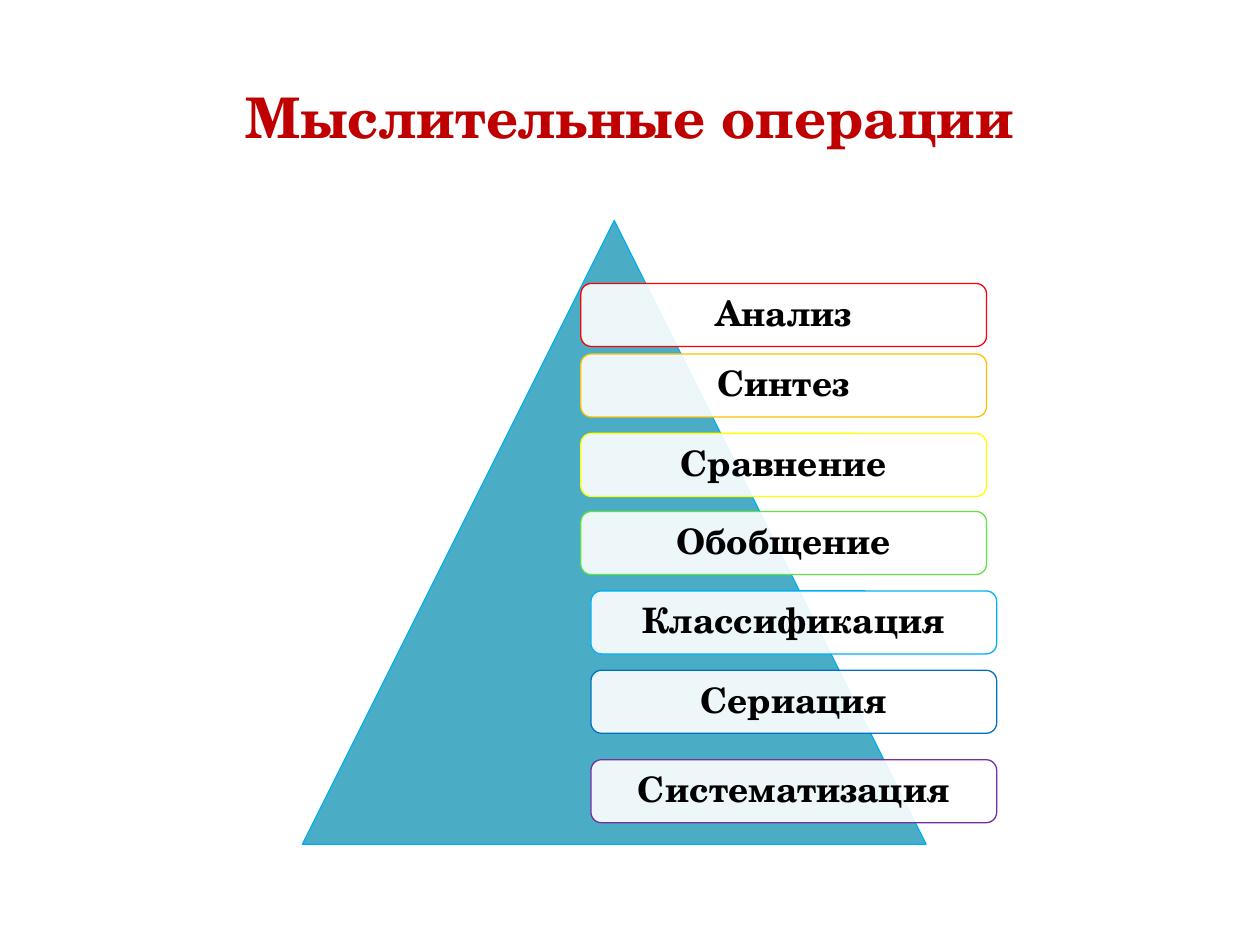
from dataclasses import dataclass

from lxml.etree import SubElement
from pptx import Presentation
from pptx.dml.color import RGBColor
from pptx.enum.shapes import MSO_SHAPE as Preset
from pptx.enum.text import MSO_ANCHOR as Anchor, PP_ALIGN as Align
from pptx.oxml.ns import qn
from pptx.shapes.autoshape import Shape
from pptx.slide import Slide
from pptx.text.text import TextFrame
from pptx.util import Inches, Pt

FONT = "TeX Gyre Schola"
UPPER_LEFT, LOWER_LEFT = 4.61, 4.69
CARD_WIDTH, CARD_HEIGHT = 3.22, 0.5


@dataclass(frozen=True)
class Operation:
    name: str
    left: float
    top: float
    outline: str


OPERATIONS = [
    Operation("Анализ", UPPER_LEFT, 2.25, "FF0000"),
    Operation("Синтез", UPPER_LEFT, 2.81, "FFC000"),
    Operation("Сравнение", UPPER_LEFT, 3.44, "FFFF00"),
    Operation("Обобщение", UPPER_LEFT, 4.06, "60E146"),
    Operation("Классификация", LOWER_LEFT, 4.69, "00B0F0"),
    Operation("Сериация", LOWER_LEFT, 5.32, "0070C0"),
    Operation("Систематизация", LOWER_LEFT, 6.03, "7030A0"),
]


def color(value: str) -> RGBColor:
    return RGBColor.from_string(value)


def write_text(frame: TextFrame, text: str, size: float, text_color: str) -> None:
    frame.text = text
    frame.word_wrap = True
    frame.vertical_anchor = Anchor.MIDDLE
    paragraph = frame.paragraphs[0]
    paragraph.alignment = Align.CENTER
    font = paragraph.runs[0].font
    font.name, font.size, font.bold = FONT, Pt(size), True
    font.color.rgb = color(text_color)


def add_title(slide: Slide, text: str) -> None:
    box = slide.shapes.add_textbox(Inches(0.5), Inches(0.3), Inches(9), Inches(1.25))
    write_text(box.text_frame, text, 32, "C00000")


def add_outlined_shape(slide: Slide, preset: Preset, left: float, top: float,
                       width: float, height: float, fill: str, outline: str) -> Shape:
    shape = slide.shapes.add_shape(
        preset, Inches(left), Inches(top), Inches(width), Inches(height))
    shape.shadow.inherit = False
    shape.fill.solid()
    shape.fill.fore_color.rgb = color(fill)
    shape.line.color.rgb = color(outline)
    shape.line.width = Pt(0.75)
    return shape


def set_opacity(shape: Shape, percent: int) -> None:
    fill_color = shape.fill._xPr.find(qn("a:solidFill"))[0]
    SubElement(fill_color, qn("a:alpha")).set("val", str(percent * 1000))


def add_operation(slide: Slide, operation: Operation) -> None:
    card = add_outlined_shape(
        slide, Preset.ROUNDED_RECTANGLE, operation.left, operation.top,
        CARD_WIDTH, CARD_HEIGHT, "FFFFFF", operation.outline)
    set_opacity(card, 90)
    frame = card.text_frame
    write_text(frame, operation.name, 20, "000000")
    frame.paragraphs[0].line_spacing = 0.9
    frame.margin_left = frame.margin_right = Inches(0.08)
    frame.margin_top = frame.margin_bottom = Inches(0.08)


def main() -> None:
    presentation = Presentation()
    presentation.slide_width = Inches(10)
    presentation.slide_height = Inches(7.5)
    slide = presentation.slides.add_slide(presentation.slide_layouts[6])
    add_title(slide, "Мыслительные операции")
    add_outlined_shape(slide, Preset.ISOSCELES_TRIANGLE,
                       2.4, 1.75, 4.95, 4.95, "4BACC6", "00B0F0")
    for operation in OPERATIONS:
        add_operation(slide, operation)
    presentation.save("out.pptx")


if __name__ == "__main__":
    main()
